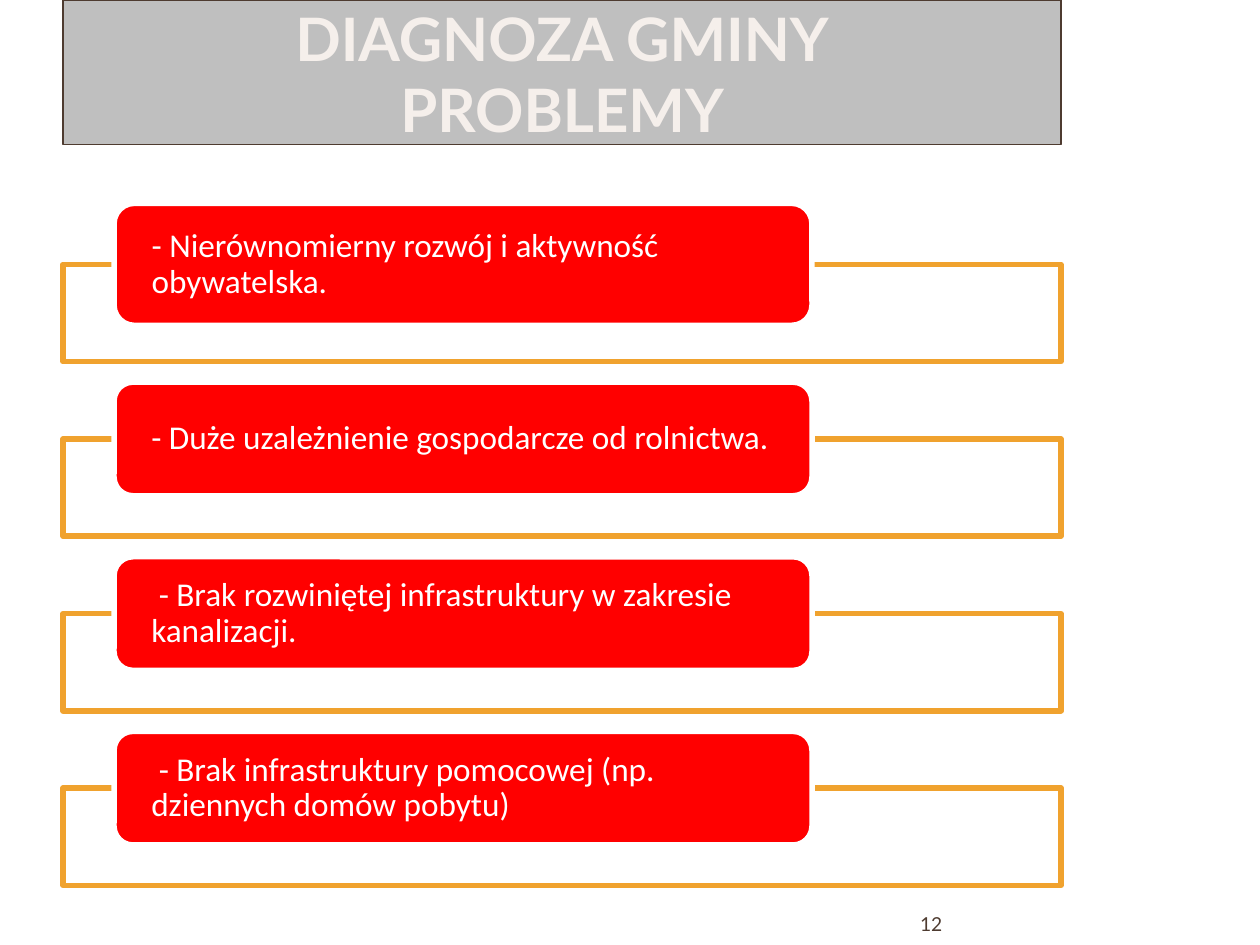
from pptx import Presentation
from pptx.dml.color import RGBColor
from pptx.enum.shapes import MSO_SHAPE
from pptx.enum.text import MSO_ANCHOR, MSO_AUTO_SIZE, PP_ALIGN
from pptx.util import Cm, Pt

RECT, ROUNDED = MSO_SHAPE.RECTANGLE, MSO_SHAPE.ROUNDED_RECTANGLE
MIDDLE, BOTTOM = MSO_ANCHOR.MIDDLE, MSO_ANCHOR.BOTTOM
LEFT, CENTER, RIGHT = PP_ALIGN.LEFT, PP_ALIGN.CENTER, PP_ALIGN.RIGHT
NO_AUTOFIT = MSO_AUTO_SIZE.NONE
TITLE_ONLY = 5

# Content
TITLE_LINES = ["DIAGNOZA GMINY", "PROBLEMY"]
# Problem text and label height in cm
PROBLEMS = [
    ("- Nierównomierny rozwój i aktywność obywatelska.", 2.46),
    ("- Duże uzależnienie gospodarcze od rolnictwa.", 2.29),
    (" - Brak rozwiniętej infrastruktury w zakresie kanalizacji.", 2.29),
    (" - Brak infrastruktury pomocowej (np. dziennych domów pobytu)", 2.29),
]
PAGE_NUMBER = "12"

COLORS = {
    "white": "FFFFFF",
    "banner": "BFBFBF",
    "brown": "4E3B30",
    "title": "F5EFEB",
    "frame": "F0A22E",
    "label": "FF0000",
}

# Layout in cm
MARGIN, WIDTH = 1.27, 20.12
FRAME_TOP, FRAME_HEIGHT, FRAME_PITCH = 5.33, 1.96, 3.52
LABEL_LEFT, LABEL_WIDTH = 2.3, 14.07


def color(name):
    return RGBColor.from_string(COLORS[name])


def paint(shape, fill, line, line_width):
    shape.fill.solid()
    shape.fill.fore_color.rgb = color(fill)
    shape.line.color.rgb = color(line)
    shape.line.width = Pt(line_width)
    shape.shadow.inherit = False


def set_frame(frame, anchor, side_inset):
    frame.word_wrap = True
    frame.auto_size = NO_AUTOFIT
    frame.vertical_anchor = anchor
    frame.margin_left = frame.margin_right = Cm(side_inset)
    frame.margin_top = frame.margin_bottom = 0


def add_run(paragraph, text, font, size, ink, bold=False):
    run = paragraph.add_run()
    run.text = text
    run.font.name, run.font.size, run.font.bold = font, Pt(size), bold
    run.font.color.rgb = color(ink)


def add_box(slide, preset, left, top, width, height, fill, line):
    box = slide.shapes.add_shape(preset, Cm(left), Cm(top), Cm(width), Cm(height))
    paint(box, fill, line, 3.15)
    return box


def add_title(slide):
    title = slide.shapes.title
    title.left, title.top, title.width, title.height = Cm(MARGIN), 0, Cm(WIDTH), Cm(2.92)
    paint(title, "banner", "brown", 0.75)
    set_frame(title.text_frame, BOTTOM, 0.13)
    heading = title.text_frame.paragraphs[0]
    heading.alignment = CENTER
    for index, line in enumerate(TITLE_LINES):
        if index:
            heading.add_line_break()
        add_run(heading, line, "Lato", 34.2, "title", bold=True)


def add_problem(slide, index, text, label_height):
    top = FRAME_TOP + index * FRAME_PITCH
    add_box(slide, RECT, MARGIN, top, WIDTH, FRAME_HEIGHT, "white", "frame")
    # The label is centred on the top edge of its frame
    label = add_box(slide, ROUNDED, LABEL_LEFT, top - label_height / 2,
                    LABEL_WIDTH, label_height, "label", "white")
    set_frame(label.text_frame, MIDDLE, 0.64)
    problem = label.text_frame.paragraphs[0]
    problem.alignment = LEFT
    problem.line_spacing = 0.9
    add_run(problem, text, "Calibri", 19, "white")


def add_page_number(slide):
    number = slide.shapes.add_textbox(Cm(17.37), Cm(18.21), Cm(1.63), Cm(0.64))
    set_frame(number.text_frame, BOTTOM, 0)
    paragraph = number.text_frame.paragraphs[0]
    paragraph.alignment = RIGHT
    add_run(paragraph, PAGE_NUMBER, "Lato", 11, "brown")


def main():
    deck = Presentation()
    deck.slide_width, deck.slide_height = Cm(25.4), Cm(19.05)
    slide = deck.slides.add_slide(deck.slide_layouts[TITLE_ONLY])
    add_title(slide)
    for index, (text, label_height) in enumerate(PROBLEMS):
        add_problem(slide, index, text, label_height)
    add_page_number(slide)
    deck.save("out.pptx")


if __name__ == "__main__":
    main()
